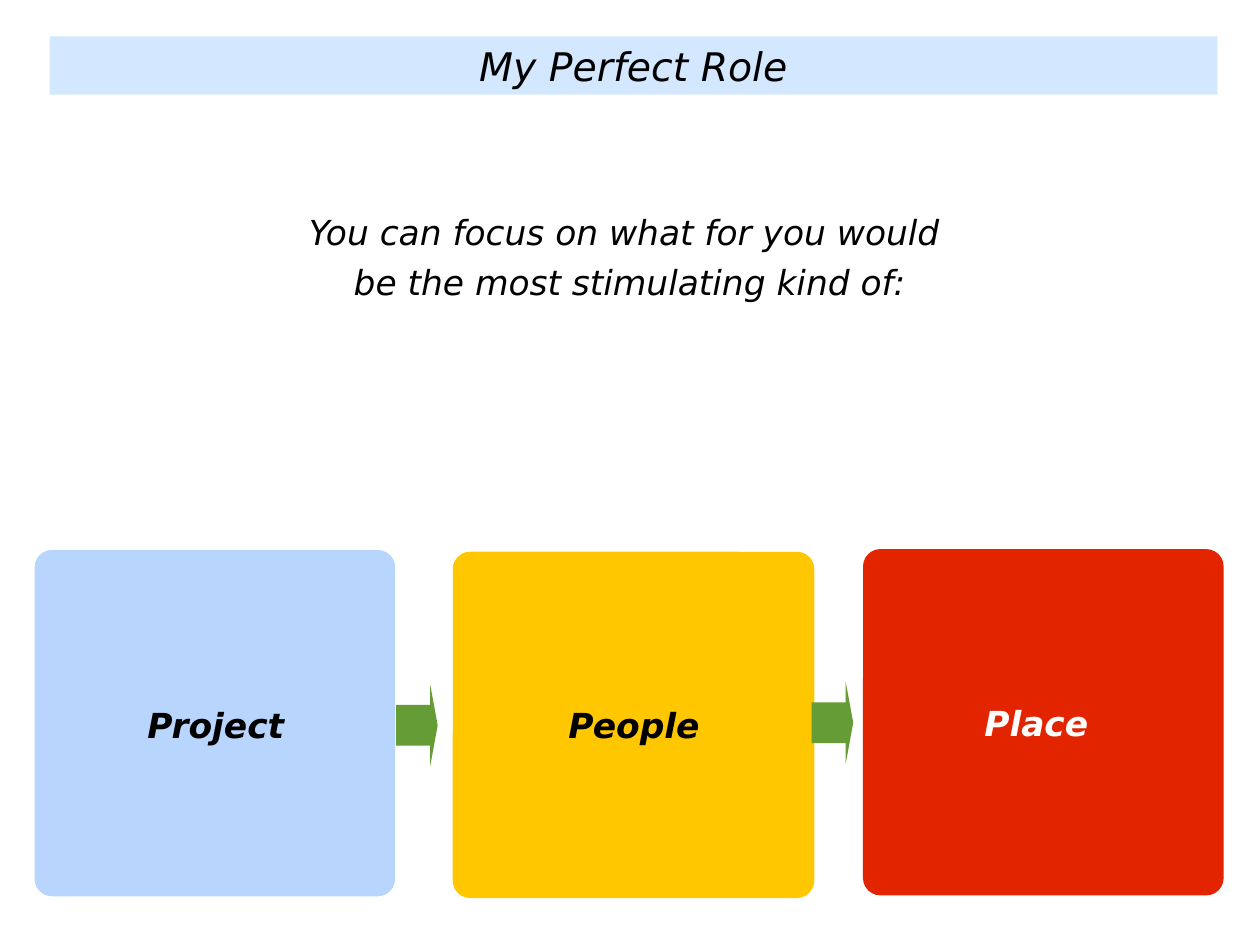
from dataclasses import dataclass

from pptx import Presentation
from pptx.dml.color import RGBColor
from pptx.enum.shapes import MSO_SHAPE
from pptx.enum.text import MSO_ANCHOR, MSO_AUTO_SIZE, PP_ALIGN
from pptx.util import Emu, Pt

ROUND = MSO_SHAPE.ROUNDED_RECTANGLE
ARROW = MSO_SHAPE.RIGHT_ARROW
MIDDLE = MSO_ANCHOR.MIDDLE
CENTER = PP_ALIGN.CENTER
FIXED = MSO_AUTO_SIZE.NONE

FONT = "DejaVu Sans"
BLACK = "000000"
WHITE = "FFFFFF"
GREEN = "669C35"
SCALE = 9144


@dataclass(frozen=True)
class Box:
    left: int
    top: int
    width: int
    height: int


@dataclass(frozen=True)
class Card:
    box: Box
    fill: str
    label: str
    place: Box
    ink: str


CARDS = [
    Card(Box(39, 621, 407, 391), "B8D5FE", "Project", Box(51, 787, 385, 63), BLACK),
    Card(Box(511, 623, 408, 391), "FEC700", "People", Box(523, 787, 385, 63), BLACK),
    Card(Box(974, 620, 407, 391), "E32400", "Place", Box(972, 788, 395, 56), WHITE),
]
ARROWS = [Box(447, 773, 47, 92), Box(916, 770, 47, 92)]


def px(size: int) -> Emu:
    return Emu(size * SCALE)


def rgb(color: str) -> RGBColor:
    return RGBColor.from_string(color)


def spots(box: Box) -> list[Emu]:
    return [px(size) for size in (box.left, box.top, box.width, box.height)]


def move(shape, box: Box) -> None:
    shape.left, shape.top, shape.width, shape.height = spots(box)


def paint(shape, color: str) -> None:
    shape.fill.solid()
    shape.fill.fore_color.rgb = rgb(color)


def write(shape, text: str, size: int, color: str, bold: bool = False,
          inset: int = 4, lines: float = 1.0) -> None:
    frame = shape.text_frame
    frame.text = text
    frame.word_wrap = True
    frame.auto_size = FIXED
    frame.vertical_anchor = MIDDLE
    frame.margin_left = frame.margin_right = px(inset)
    frame.margin_top = frame.margin_bottom = px(inset)
    for para in frame.paragraphs:
        para.alignment = CENTER
        para.line_spacing = lines
        para.space_before = Pt(0)
        for run in para.runs:
            font = run.font
            font.name = FONT
            font.size = Pt(size)
            font.bold = bold
            font.italic = True
            font.color.rgb = rgb(color)


def plain(shape) -> None:
    for para in shape.text_frame.paragraphs:
        props = para._p.get_or_add_pPr()
        props.set("marL", "0")
        props.set("indent", "0")
        props.insert_element_before(
            props.makeelement(
                "{http://schemas.openxmlformats.org/drawingml/2006/main}buNone", {}),
            "a:tabLst", "a:defRPr", "a:extLst")


def draw(slide, kind, box: Box, color: str, *ratios: float) -> None:
    shape = slide.shapes.add_shape(kind, *spots(box))
    shape.shadow.inherit = False
    paint(shape, color)
    shape.line.fill.background()
    for index, ratio in enumerate(ratios):
        shape.adjustments[index] = ratio


def main() -> None:
    deck = Presentation()
    deck.slide_width, deck.slide_height = px(1422), px(1067)
    slide = deck.slides.add_slide(deck.slide_layouts[1])

    title = slide.shapes.title
    move(title, Box(56, 41, 1318, 66))
    paint(title, "D3E8FF")
    write(title, "My Perfect Role", 32, BLACK, inset=6)

    body = slide.placeholders[1]
    move(body, Box(44, 229, 1333, 112))
    write(body, "You can focus on what for you would \nbe the most stimulating kind of:",
          28, BLACK, lines=1.2)
    plain(body)

    for card in CARDS:
        draw(slide, ROUND, card.box, card.fill, 0.05)
    for box in ARROWS:
        draw(slide, ARROW, box, GREEN, 0.5, 0.18)
    for card in CARDS:
        label = slide.shapes.add_textbox(*spots(card.place))
        write(label, card.label, 28, card.ink, bold=True)

    deck.save("out.pptx")


if __name__ == "__main__":
    main()
